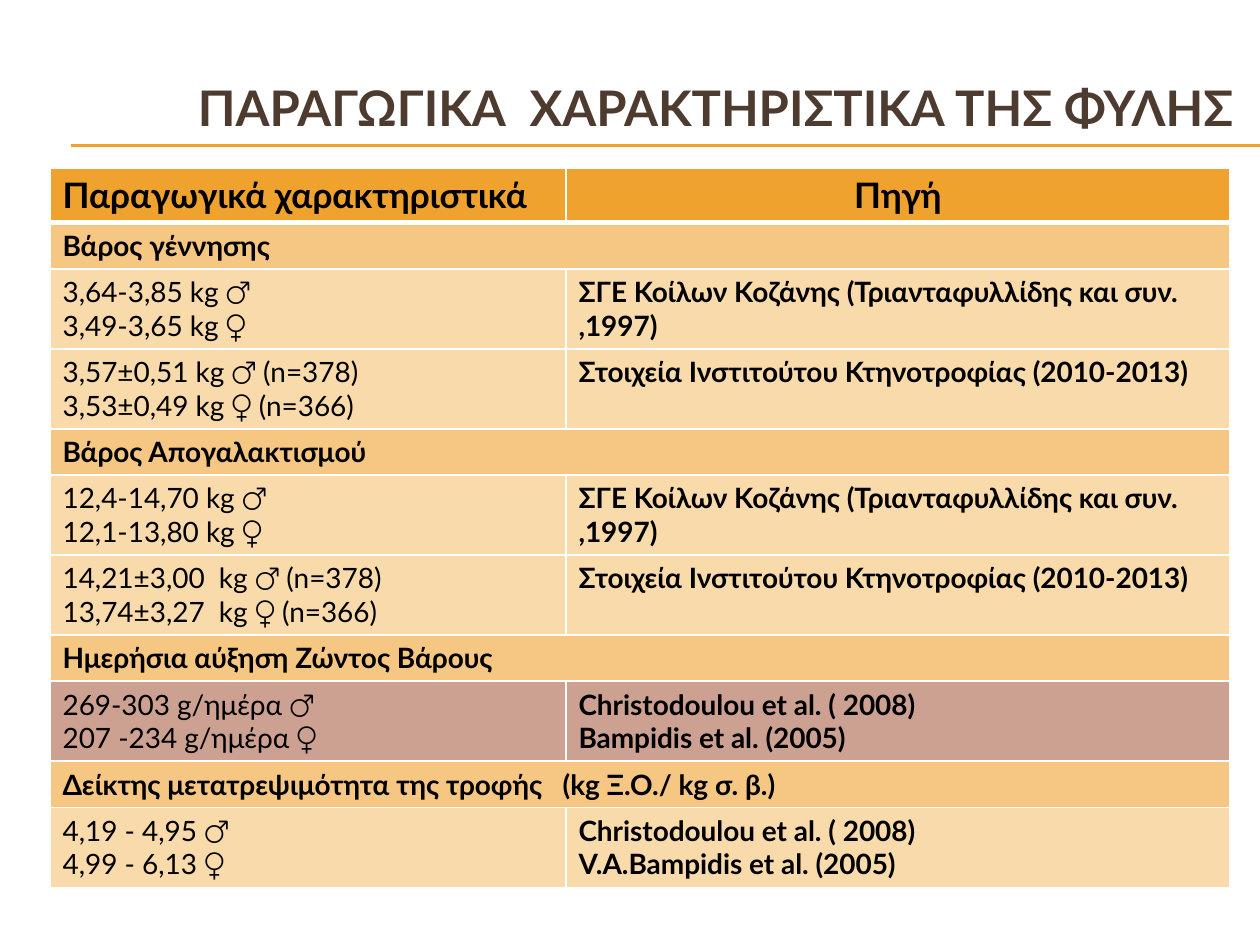
import pptx
import pptx.util
import pptx.dml.color
import pptx.enum.shapes
import pptx.enum.text
import pptx.oxml
import pptx.oxml.ns

COLORS = {"title": "4E3B30", "accent": "F0A22E", "section": "F6C782", "row": "F9DAAB",
          "highlight": "CCA192", "text": "000000", "border": "FFFFFF"}
GREEK_SOURCES = ["ΣΓΕ Κοίλων Κοζάνης (Τριανταφυλλίδης και συν. ,1997)",
                 "Στοιχεία Ινστιτούτου Κτηνοτροφίας (2010-2013)"]
HEIGHTS = {"accent": 54, "section": 46, "row": 80, "highlight": 80}
ROWS = [
    ("accent", "Παραγωγικά χαρακτηριστικά", "Πηγή"),
    ("section", "Βάρος γέννησης", ""),
    ("row", "3,64-3,85 kg ♂\n3,49-3,65 kg ♀", GREEK_SOURCES[0]),
    ("row", "3,57±0,51 kg ♂ (n=378)\n3,53±0,49 kg ♀ (n=366)", GREEK_SOURCES[1]),
    ("section", "Βάρος Απογαλακτισμού", ""),
    ("row", "12,4-14,70 kg ♂\n12,1-13,80 kg ♀", GREEK_SOURCES[0]),
    ("row", "14,21±3,00  kg ♂ (n=378)\n13,74±3,27  kg ♀ (n=366)", GREEK_SOURCES[1]),
    ("section", "Ημερήσια αύξηση Ζώντος Βάρους", ""),
    ("highlight", "269-303 g/ημέρα ♂\n207 -234 g/ημέρα ♀",
     "Christodoulou et al. ( 2008)\nBampidis et al. (2005)"),
    ("section", "Δείκτης μετατρεψιμότητα της τροφής   (kg Ξ.Ο./ kg σ. β.)", ""),
    ("row", "4,19 - 4,95 ♂\n4,99 - 6,13 ♀",
     "Christodoulou et al. ( 2008)\nV.A.Bampidis et al. (2005)"),
]


def px(n):
    return pptx.util.Emu(n * 914400 // 126)


def rgb(name):
    return pptx.dml.color.RGBColor.from_string(COLORS[name])


class SlideBuilder:
    """Draws styled elements on one slide."""

    def __init__(self, slide, font="Lato"):
        self.slide = slide
        self.font = font

    def format(self, tf, size, color, bold):
        for p in tf.paragraphs:
            for r in p.runs:
                r.font.name = self.font
                r.font.size = pptx.util.Pt(size)
                r.font.bold = bold
                r.font.color.rgb = rgb(color)

    def line(self, x1, y1, x2, y2):
        sp = self.slide.shapes.add_connector(
            pptx.enum.shapes.MSO_CONNECTOR.STRAIGHT, px(x1), px(y1), px(x2), px(y2))
        sp.line.color.rgb = rgb("accent")
        sp.line.width = pptx.util.Pt(0.75)
        sp._element.spPr.append(pptx.oxml.parse_xml(
            f'<a:effectLst {pptx.oxml.ns.nsdecls("a")}/>'))

    def title(self, x, y, w, h, text, indent):
        tf = self.slide.shapes.add_textbox(px(x), px(y), px(w), px(h)).text_frame
        tf.word_wrap = True
        tf.vertical_anchor = pptx.enum.text.MSO_ANCHOR.MIDDLE
        tf.margin_left = px(indent)
        tf.text = text
        self.format(tf, 28, "title", True)

    def borders(self, cell, top, bottom):
        widths = {"lnL": 1, "lnR": 1, "lnT": top, "lnB": bottom}
        tcPr = cell._tc.get_or_add_tcPr()
        for i, (tag, width) in enumerate(widths.items()):
            tcPr.insert(i, pptx.oxml.parse_xml(
                f'<a:{tag} {pptx.oxml.ns.nsdecls("a")} w="{pptx.util.Pt(width)}">'
                f'<a:solidFill><a:srgbClr val="{COLORS["border"]}"/></a:solidFill></a:{tag}>'))

    def table(self, x, y, widths, rows):
        heights = [HEIGHTS[row[0]] for row in rows]
        table = self.slide.shapes.add_table(
            len(rows), len(widths), px(x), px(y), px(sum(widths)), px(sum(heights))).table
        for column, width in zip(table.columns, widths):
            column.width = px(width)
        for i, (kind, *texts) in enumerate(rows):
            table.rows[i].height = px(heights[i])
            for j, text in enumerate(texts):
                cell = table.cell(i, j)
                cell.text = text
                cell.fill.solid()
                cell.fill.fore_color.rgb = rgb(kind)
                self.borders(cell, 3 if i == 1 else 1, 3 if i == 0 else 1)
                bold = j == 1 or kind in ("accent", "section")
                self.format(cell.text_frame, 20 if i == 0 else 16, "text", bold)
            if kind == "section":
                table.cell(i, 0).merge(table.cell(i, 1))
        table.cell(0, 1).text_frame.paragraphs[0].alignment = pptx.enum.text.PP_ALIGN.CENTER


def main():
    prs = pptx.Presentation()
    prs.slide_width, prs.slide_height = px(1260), px(945)
    s = SlideBuilder(prs.slides.add_slide(prs.slide_layouts[6]))
    for y in (145, 146):
        s.line(71, y, 1260, y)
    s.title(142, 49, 1197, 116, "ΠΑΡΑΓΩΓΙΚΑ  ΧΑΡΑΚΤΗΡΙΣΤΙΚΑ ΤΗΣ ΦΥΛΗΣ", 56)
    s.table(50, 168, [516, 664], ROWS)
    prs.save("out.pptx")


if __name__ == "__main__":
    main()
